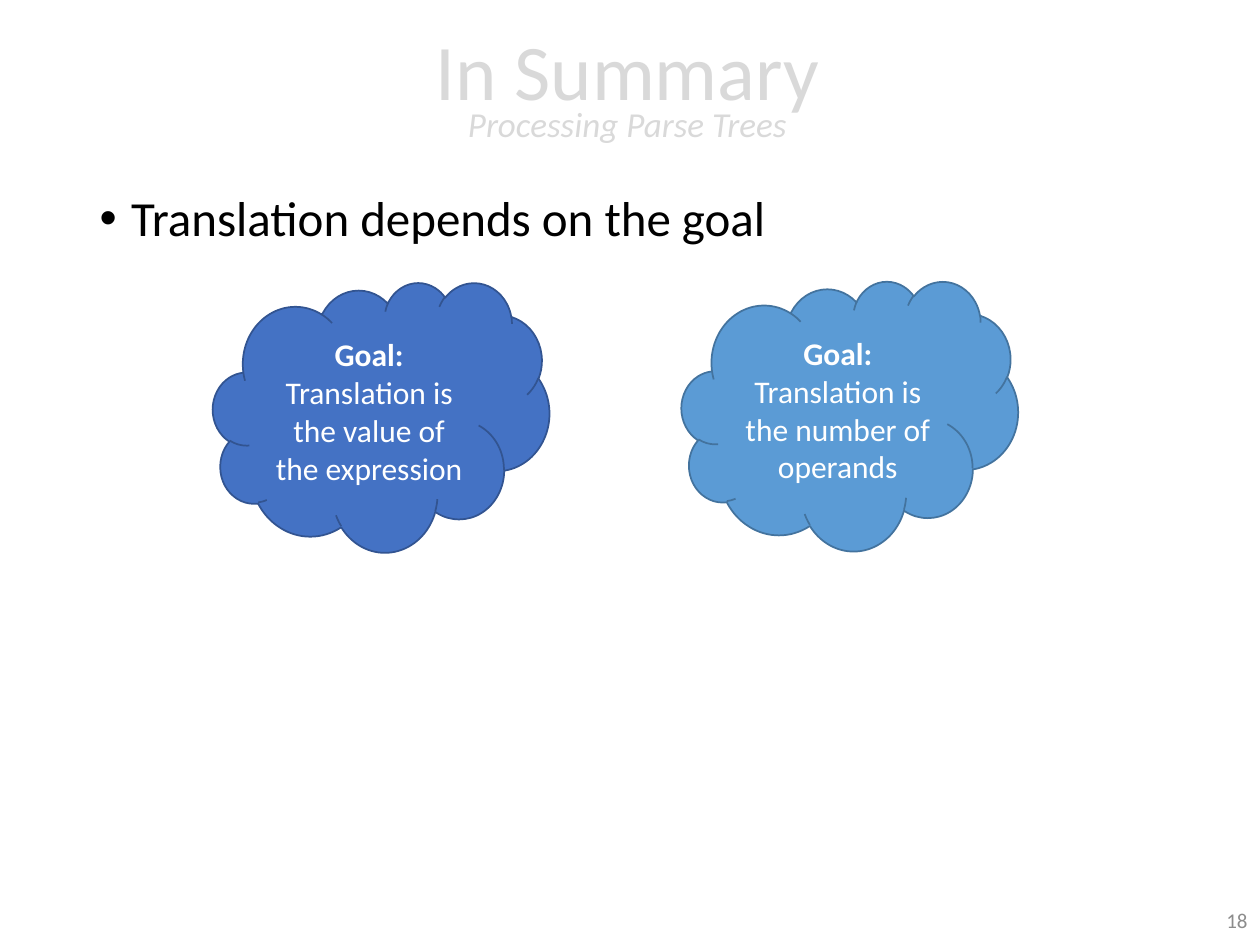
from lxml import etree
from pptx import Presentation
from pptx.dml.color import RGBColor
from pptx.enum.shapes import MSO_SHAPE
from pptx.enum.text import MSO_ANCHOR, MSO_AUTO_SIZE, PP_ALIGN
from pptx.oxml.ns import qn
from pptx.util import Inches, Pt

CLOUD = MSO_SHAPE.CLOUD
MIDDLE, TOP = MSO_ANCHOR.MIDDLE, MSO_ANCHOR.TOP
CENTER, RIGHT, LEFT = PP_ALIGN.CENTER, PP_ALIGN.RIGHT, PP_ALIGN.LEFT
NO_FIT = MSO_AUTO_SIZE.NONE

FONT = "Calibri"
WIDTH, HEIGHT = 10, 7.5
CLOUD_SIZE = (2.67, 2.14)


def color(hex_string):
    return RGBColor.from_string(hex_string)


def place(sp, left, top, width, height):
    sp.left, sp.top = Inches(left), Inches(top)
    sp.width, sp.height = Inches(width), Inches(height)


def set_frame(sp, anchor):
    tf = sp.text_frame
    tf.word_wrap = True
    tf.auto_size = NO_FIT
    tf.vertical_anchor = anchor
    return tf


def add_run(p, text, size, hex_color, bold=False, italic=False):
    r = p.add_run()
    r.text = text
    r.font.name, r.font.size = FONT, Pt(size)
    r.font.bold, r.font.italic = bold, italic
    r.font.color.rgb = color(hex_color)


def fill_title(sp, title, subtitle):
    place(sp, 0.2, 0.03, 9.56, 1.45)
    p = set_frame(sp, MIDDLE).paragraphs[0]
    p.alignment, p.line_spacing = CENTER, 0.7
    add_run(p, title, 45, "D9D9D9")
    p.add_line_break()
    add_run(p, subtitle, 20, "D9D9D9", italic=True)


def fill_body(sp, text):
    place(sp, 0.69, 1.49, 8.62, 0.65)
    p = set_frame(sp, TOP).paragraphs[0]
    p.alignment, p.line_spacing, p.space_before = LEFT, 0.9, Pt(10)
    # Bullet with a hanging indent
    pPr = p._p.get_or_add_pPr()
    pPr.set("marL", str(Inches(0.25)))
    pPr.set("indent", str(Inches(-0.25)))
    etree.SubElement(pPr, qn("a:buFont")).set("typeface", "Arial")
    etree.SubElement(pPr, qn("a:buChar")).set("char", "•")
    add_run(p, text, 28, "000000")


def add_goal_cloud(s, left, top, fill, line, goal):
    sp = s.shapes.add_shape(CLOUD, 0, 0, 0, 0)
    place(sp, left, top, *CLOUD_SIZE)
    sp.shadow.inherit = False
    sp.fill.solid()
    sp.fill.fore_color.rgb = color(fill)
    sp.line.color.rgb = color(line)
    sp.line.width = Pt(1)
    tf = set_frame(sp, MIDDLE)
    heading, detail = tf.paragraphs[0], tf.add_paragraph()
    heading.alignment = detail.alignment = CENTER
    add_run(heading, "Goal:", 18, "FFFFFF", bold=True)
    add_run(detail, goal, 18, "FFFFFF")


def add_page_number(s, number):
    width, height = 2.25, 0.4
    sp = s.shapes.add_textbox(0, 0, 0, 0)
    place(sp, WIDTH - width, HEIGHT - height, width, height)
    p = set_frame(sp, MIDDLE).paragraphs[0]
    p.alignment = RIGHT
    add_run(p, number, 12, "8C8C8C")


def main():
    prs = Presentation()
    prs.slide_width, prs.slide_height = Inches(WIDTH), Inches(HEIGHT)
    s = prs.slides.add_slide(prs.slide_layouts[1])

    # Heading and list
    fill_title(s.shapes.title, "In Summary", "Processing Parse Trees")
    fill_body(s.placeholders[1], "Translation depends on the goal")

    # The two goals
    add_goal_cloud(s, 5.41, 2.23, "5B9BD5", "43739E",
                   "Translation is the number of operands")
    add_goal_cloud(s, 1.69, 2.24, "4472C4", "325491",
                   "Translation is the value of the expression")

    add_page_number(s, "18")
    prs.save("out.pptx")


if __name__ == "__main__":
    main()
